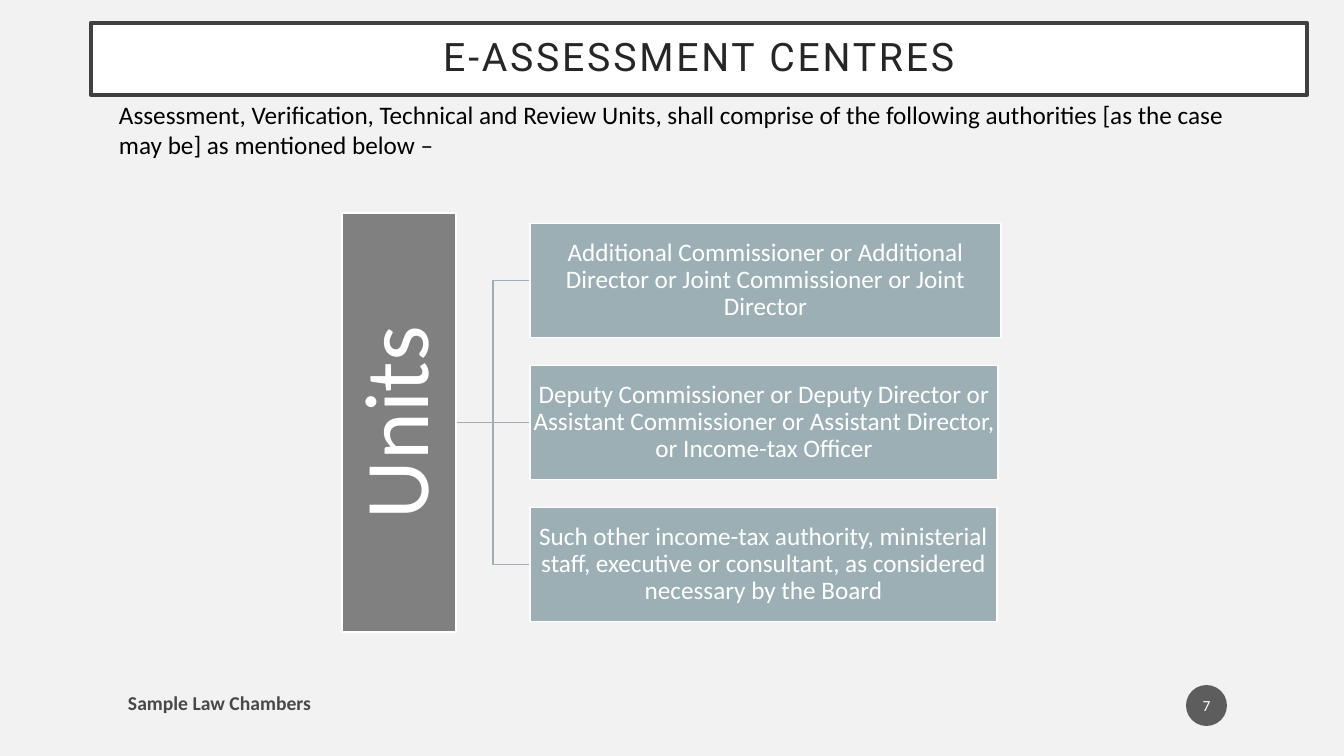
from pptx import Presentation
from pptx import util as u
from pptx.dml.color import RGBColor
from pptx.enum import shapes, text
from pptx.oxml import ns
from lxml import etree

PX = 12192000 / 1344
WHITE = RGBColor(0xFF, 0xFF, 0xFF)
BLACK = RGBColor(0, 0, 0)
PAPER = RGBColor(0xF2, 0xF2, 0xF2)
INK = RGBColor(0x26, 0x26, 0x26)
FRAME = RGBColor(0x40, 0x40, 0x40)
FOOT = RGBColor(0x48, 0x48, 0x48)
DISC = RGBColor(0x5D, 0x5D, 0x5D)
GREY = RGBColor(0x80, 0x80, 0x80)
TEAL = RGBColor(0x9B, 0xAF, 0xB5)
CENTER = text.PP_ALIGN.CENTER
RANKS = [
    ("Additional Commissioner or Additional Director or Joint Commissioner "
     "or Joint Director", 471),
    ("Deputy Commissioner or Deputy Director or Assistant Commissioner or "
     "Assistant Director, or Income-tax Officer", 468),
    ("Such other income-tax authority, ministerial staff, executive or "
     "consultant, as considered necessary by the Board", 467),
]


def px(*vals):
    """Turn pixel lengths into EMU."""
    return [u.Emu(round(v * PX)) for v in vals]


def write(shape, words, size, color, font="Calibri", pad=(10, 5),
          align=CENTER, lead=0.9, bold=False, mid=True):
    """Fill a shape with one formatted paragraph and return it."""
    frame = shape.text_frame
    frame.word_wrap = True
    frame.auto_size = text.MSO_AUTO_SIZE.NONE
    frame.vertical_anchor = (text.MSO_ANCHOR.MIDDLE if mid
                             else text.MSO_ANCHOR.TOP)
    frame.margin_left, frame.margin_top = px(*pad)
    frame.margin_right, frame.margin_bottom = px(*pad)
    para = frame.paragraphs[0]
    para.text = words
    para.alignment = align
    para.line_spacing = lead
    para.font.name = font
    para.font.size = u.Pt(size)
    para.font.bold = bold
    para.font.color.rgb = color
    return para


def block(slide, kind, box, fill, edge=None):
    """Add a flat preset shape, with a one-point edge if given."""
    shape = slide.shapes.add_shape(kind, *px(*box))
    shape.shadow.inherit = False
    shape.fill.solid()
    shape.fill.fore_color.rgb = fill
    if edge is None:
        shape.line.fill.background()
    else:
        shape.line.color.rgb = edge
        shape.line.width = u.Pt(1)
    return shape


def link(slide, kind, start, end):
    """Join two points with a thin line."""
    line = slide.shapes.add_connector(kind, *px(*start, *end))
    line.line.color.rgb = TEAL
    line.line.width = u.Pt(1)
    etree.SubElement(line._element.spPr, ns.qn("a:effectLst"))


def head(slide, box):
    """Set the framed title."""
    title = slide.shapes.title
    title.left, title.top, title.width, title.height = px(*box)
    title.fill.solid()
    title.fill.fore_color.rgb = WHITE
    title.line.color.rgb = FRAME
    title.line.width = u.Pt(3)
    para = write(title, "E-ASSESSMENT CENTRES", 28, INK, "Roboto", (30, 20))
    para._p.pPr.find(ns.qn("a:defRPr")).set("spc", "200")


def intro(slide, box):
    """Place the opening sentence."""
    area = slide.shapes.add_textbox(*px(*box))
    write(area, "Assessment, Verification, Technical and Review Units, shall "
          "comprise of the following authorities [as the case may be] as "
          "mentioned below –", 18, BLACK, align=text.PP_ALIGN.LEFT,
          lead=1.0, mid=False)


def tree(slide, box):
    """Draw the upright root bar and its linked ranks."""
    left, top, wide, high = box
    thick, gap, step = 114, 74, 142
    mid = top + high / 2
    stem = left + thick
    leaf = stem + gap
    kinds = shapes.MSO_CONNECTOR
    rect = shapes.MSO_SHAPE.RECTANGLE
    for row, (words, width) in enumerate(RANKS):
        y = mid + (row - 1) * step
        kind = kinds.STRAIGHT if y == mid else kinds.ELBOW
        link(slide, kind, (stem, mid), (leaf, y))
        rank = block(slide, rect, (leaf, y - thick / 2, width, thick),
                     TEAL, WHITE)
        write(rank, words, 18, WHITE, pad=(1, 1))
    root = block(slide, rect, (left + (thick - high) / 2, mid - thick / 2,
                               high, thick), GREY, WHITE)
    root.rotation = 270
    write(root, "Units", 65, WHITE, pad=(5, 5))


def foot(slide, box):
    """Place the firm name and the page number."""
    left, top, wide, high = box
    firm = slide.shapes.add_textbox(*px(left, top, 650, 35))
    write(firm, "Sample Law Chambers", 14, FOOT, align=text.PP_ALIGN.LEFT,
          lead=1.0, bold=True)
    disc = block(slide, shapes.MSO_SHAPE.OVAL,
                 (left + wide - high, top, high, high), DISC)
    write(disc, "7", 11, WHITE, pad=(2, 5), lead=1.0)


def main():
    """Build and save the slide."""
    deck = Presentation()
    deck.slide_width, deck.slide_height = px(1344, 756)
    slide = deck.slides.add_slide(deck.slide_layouts[5])
    slide.background.fill.solid()
    slide.background.fill.fore_color.rgb = PAPER
    head(slide, (91, 23, 1216, 72))
    intro(slide, (109, 94, 1143, 72))
    tree(slide, (342, 213, 659, 419))
    foot(slide, (118, 685, 1109, 41))
    deck.save("out.pptx")


if __name__ == "__main__":
    main()
